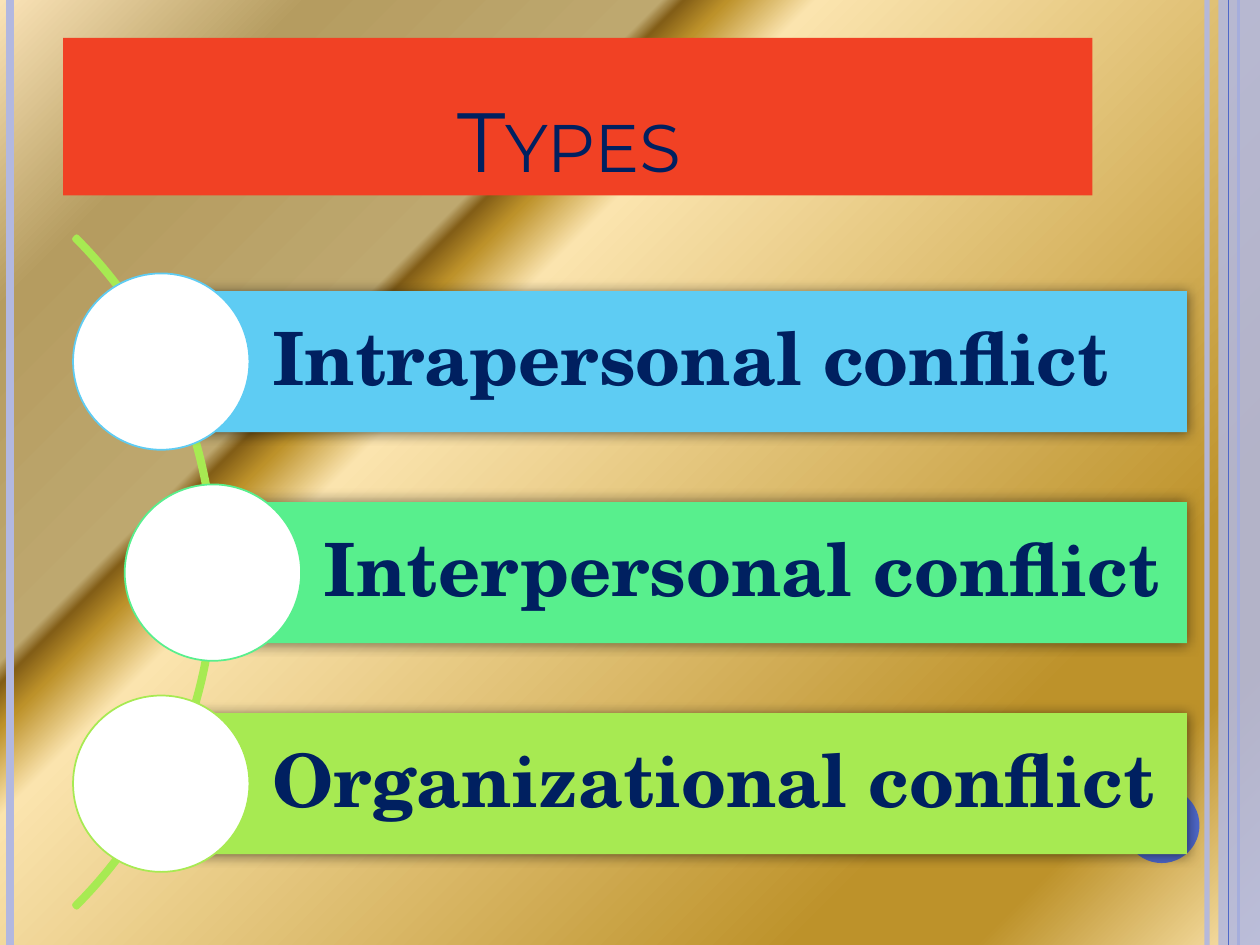
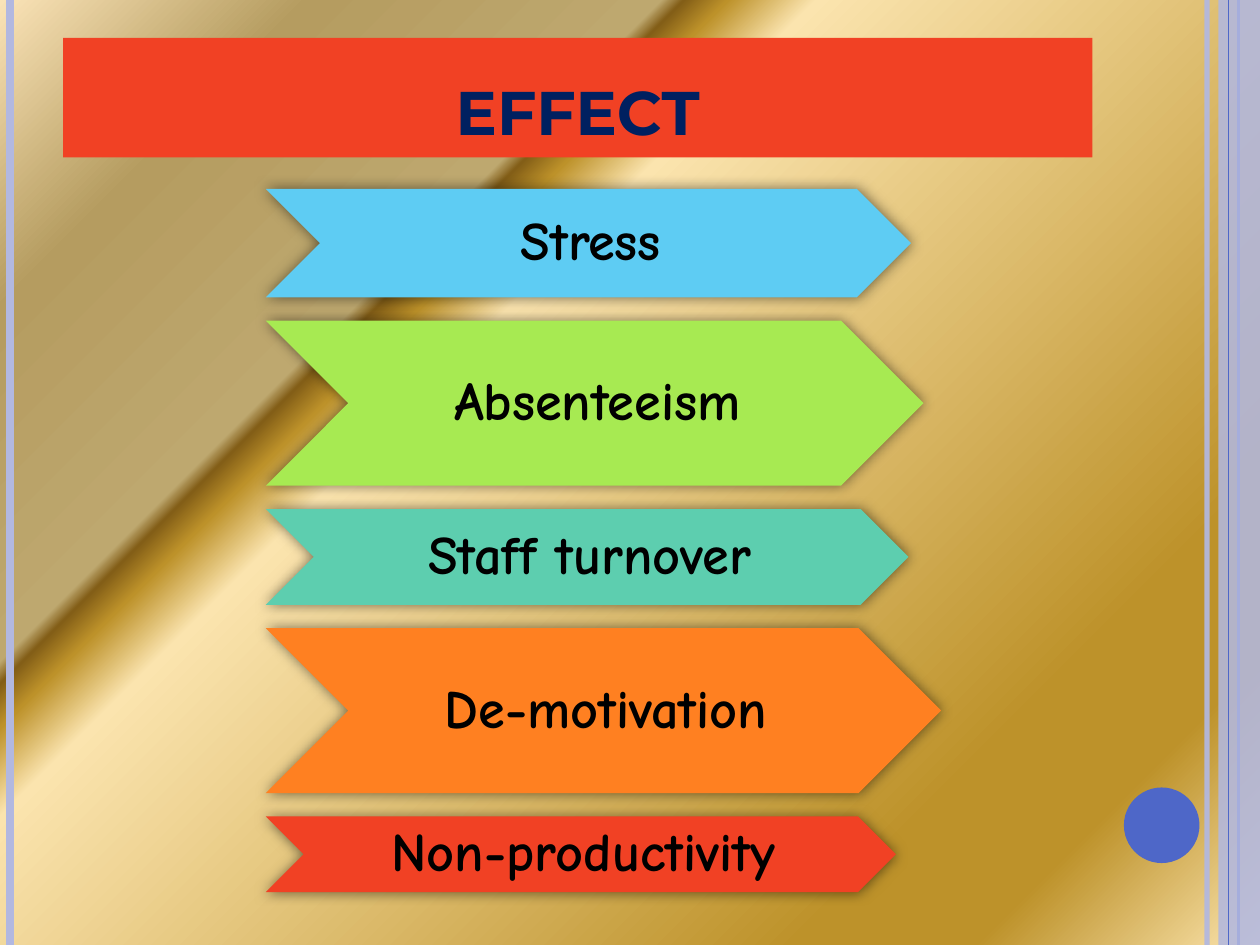
from lxml.etree import SubElement
from pptx import Presentation
from pptx.dml.color import RGBColor
from pptx.enum.shapes import MSO_CONNECTOR, MSO_SHAPE
from pptx.enum.text import MSO_ANCHOR, MSO_AUTO_SIZE, PP_ALIGN
from pptx.oxml.ns import qn
from pptx.util import Inches, Pt

SLIDE_WIDTH, SLIDE_HEIGHT = 10, 7.5

NAVY = RGBColor(0x00, 0x20, 0x60)
BLACK = RGBColor(0x00, 0x00, 0x00)
WHITE = RGBColor(0xFF, 0xFF, 0xFF)
RED = RGBColor(0xF1, 0x41, 0x24)
SKY = RGBColor(0x5E, 0xCC, 0xF3)
MINT = RGBColor(0x58, 0xEF, 0x8D)
LIME = RGBColor(0xA7, 0xEA, 0x52)
TEAL = RGBColor(0x5D, 0xCE, 0xAF)
ORANGE = RGBColor(0xFF, 0x80, 0x21)
INDIGO = RGBColor(0x4E, 0x67, 0xC8)
LAVENDER = RGBColor(0xB2, 0xB8, 0xE0)
CREAM = RGBColor(0xFB, 0xE4, 0xAE)
GOLD = RGBColor(0xBD, 0x92, 0x2A)
BRONZE = RGBColor(0x83, 0x5E, 0x17)
SAND = RGBColor(0xBE, 0xA8, 0x6F)
KHAKI = RGBColor(0xB5, 0x9C, 0x60)
PALE = RGBColor(0xFA, 0xE3, 0xB7)

# Gold sheen, running from the bottom right to the top left corner
SHEEN = [(0, CREAM), (13, GOLD), (21, GOLD), (63, CREAM), (67, GOLD),
         (69, BRONZE), (70, SAND), (86, KHAKI), (100, PALE)]

TITLE_FONT, TYPE_FONT, EFFECT_FONT = "Montserrat", "TeX Gyre Schola", "Comic Neue"
TITLE_LEFT, TITLE_TOP, TITLE_WIDTH = 0.5, 0.3, 8.17

# Conflict types: name, left edge of the bar, colour
TYPES = [("Intrapersonal conflict", 1.27, SKY),
         ("Interpersonal conflict", 1.68, MINT),
         ("Organizational conflict", 1.27, LIME)]
BAR_TOP, LAST_BAR_TOP, BAR_HEIGHT, BAR_RIGHT = 2.31, 5.66, 1.12, 9.42
DISC_SIZE = BAR_HEIGHT * 1.25

# Effects: name, chevron width, chevron height, colour
EFFECTS = [("Stress", 5.12, 0.86, SKY),
           ("Absenteeism", 5.22, 1.31, LIME),
           ("Staff turnover", 5.1, 0.76, TEAL),
           ("De-motivation", 5.36, 1.31, ORANGE),
           ("Non-productivity", 5, 0.6, RED)]
EFFECTS_LEFT, EFFECTS_TOP, EFFECTS_BOTTOM = 2.11, 1.5, 7.08


def set_opacity(container, percent):
    """Make the colour inside a shape's fill or line partly transparent."""
    colour = container.find(".//" + qn("a:srgbClr"))
    SubElement(colour, qn("a:alpha"), val=str(percent * 1000))


def add_figure(slide, preset, box, fill=None, line=None, line_width=1):
    figure = slide.shapes.add_shape(preset, *(Inches(length) for length in box))
    figure.shadow.inherit = False
    if fill is None:
        figure.fill.background()
    else:
        figure.fill.solid()
        figure.fill.fore_color.rgb = fill
    if line is None:
        figure.line.fill.background()
    else:
        figure.line.color.rgb = line
        figure.line.width = Pt(line_width)
    return figure


def add_glow(figure):
    """Give a figure a soft dark rim on all sides."""
    effects = figure.element.spPr.find(qn("a:effectLst"))
    rim = SubElement(effects, qn("a:outerShdw"), blurRad=str(Pt(7.5)),
                     dist="0", dir="0", rotWithShape="0")
    colour = SubElement(rim, qn("a:srgbClr"), val=str(BLACK))
    SubElement(colour, qn("a:alpha"), val="50000")


def add_rule(slide, x, colour, width):
    """Draw a vertical line over the full height of the slide."""
    rule = slide.shapes.add_connector(MSO_CONNECTOR.STRAIGHT, Inches(x), 0,
                                      Inches(x), Inches(SLIDE_HEIGHT))
    rule.line.color.rgb = colour
    rule.line.width = Pt(width)
    SubElement(rule.element.spPr, qn("a:effectLst"))
    return rule


def add_run(paragraph, text, font, size, colour, bold=False):
    run = paragraph.add_run()
    run.text = text
    run.font.name = font
    run.font.size = Pt(size)
    run.font.color.rgb = colour
    run.font.bold = bold
    return run


def write_label(figure, text, font, size, colour, align, insets):
    frame = figure.text_frame
    frame.word_wrap = True
    frame.vertical_anchor = MSO_ANCHOR.MIDDLE
    (frame.margin_left, frame.margin_top,
     frame.margin_right, frame.margin_bottom) = (Inches(inset) for inset in insets)
    paragraph = frame.paragraphs[0]
    paragraph.alignment = align
    paragraph.line_spacing = 0.9
    add_run(paragraph, text, font, size, colour, bold=True)


def paint_sheen(master):
    fill = master.background.fill
    fill.gradient()
    fill.gradient_angle = 135
    stops = master.element.find(".//" + qn("a:gsLst"))
    for stop in list(stops):
        stops.remove(stop)
    for percent, colour in SHEEN:
        stop = SubElement(stops, qn("a:gs"), pos=str(percent * 1000))
        SubElement(stop, qn("a:srgbClr"), val=str(colour))


def decorate_master(master, slide):
    """Draw the side bands on a slide, then move them to the master."""
    edge_rule = add_rule(slide, 9.58, LAVENDER, 3)
    set_opacity(edge_rule.element.spPr, 93)
    left_rule = add_rule(slide, 0.08, LAVENDER, 4.5)
    dark_rule = add_rule(slide, 9.83, INDIGO, 1.5)
    band = add_figure(slide, MSO_SHAPE.RECTANGLE,
                      (9.67, 0, SLIDE_WIDTH - 9.67, SLIDE_HEIGHT), LAVENDER)
    set_opacity(band.element.spPr, 87)
    thin_rule = add_rule(slide, 9.75, INDIGO, 0.75)
    dot = add_figure(slide, MSO_SHAPE.OVAL, (8.92, 6.25, 0.6, 0.6), INDIGO)

    tree = master.element.find(".//" + qn("p:spTree"))
    first_id = 1 + max(shape.shape_id for shape in master.shapes)
    parts = (edge_rule, left_rule, dark_rule, band, thin_rule, dot)
    for number, part in enumerate(parts, first_id):
        part.element.find(".//" + qn("p:cNvPr")).set("id", str(number))
        tree.append(part.element)


def set_title(slide, text, height, size, bold=False):
    title = slide.shapes.title
    title.left, title.top = Inches(TITLE_LEFT), Inches(TITLE_TOP)
    title.width, title.height = Inches(TITLE_WIDTH), Inches(height)
    title.fill.solid()
    title.fill.fore_color.rgb = RED
    frame = title.text_frame
    frame.auto_size = MSO_AUTO_SIZE.NONE
    frame.vertical_anchor = MSO_ANCHOR.BOTTOM
    paragraph = frame.paragraphs[0]
    paragraph.alignment = PP_ALIGN.CENTER
    run = add_run(paragraph, text, TITLE_FONT, size, NAVY, bold)
    run.font._element.set("cap", "small")


def add_type(slide, name, left, top, colour):
    """Add a labelled bar with a disc centred on its left edge."""
    bar = add_figure(slide, MSO_SHAPE.RECTANGLE,
                     (left, top, BAR_RIGHT - left, BAR_HEIGHT), colour)
    add_glow(bar)
    write_label(bar, name, TYPE_FONT, 42, NAVY, PP_ALIGN.LEFT,
                (0.89, 0.12, 0.12, 0.12))
    disc_top = top - (DISC_SIZE - BAR_HEIGHT) / 2
    add_figure(slide, MSO_SHAPE.OVAL,
               (left + 0.01 - DISC_SIZE / 2, disc_top, DISC_SIZE, DISC_SIZE),
               WHITE, colour)


def add_types(slide):
    arc = add_figure(slide, MSO_SHAPE.BLOCK_ARC, (-5.81, 0.78, 7.52, 7.52),
                     line=LIME, line_width=3)
    # Start angle, end angle (315 and 45 degrees) and thickness
    for index, value in enumerate((189, 27, 0.003)):
        arc.adjustments[index] = value
    pitch = (LAST_BAR_TOP - BAR_TOP) / (len(TYPES) - 1)
    for row, (name, left, colour) in enumerate(TYPES):
        add_type(slide, name, left, BAR_TOP + row * pitch, colour)


def add_effects(slide):
    heights = sum(height for _, _, height, _ in EFFECTS)
    gap = (EFFECTS_BOTTOM - EFFECTS_TOP - heights) / (len(EFFECTS) - 1)
    top = EFFECTS_TOP
    for name, width, height, colour in EFFECTS:
        chevron = add_figure(slide, MSO_SHAPE.CHEVRON,
                             (EFFECTS_LEFT, top, width, height), colour)
        add_glow(chevron)
        write_label(chevron, name, EFFECT_FONT, 31, BLACK, PP_ALIGN.CENTER,
                    (0.04, 0.02, 0, 0.02))
        top += height + gap


def main():
    deck = Presentation()
    deck.slide_width, deck.slide_height = Inches(SLIDE_WIDTH), Inches(SLIDE_HEIGHT)
    title_only = deck.slide_layouts.get_by_name("Title Only")
    types_slide = deck.slides.add_slide(title_only)
    effects_slide = deck.slides.add_slide(title_only)

    paint_sheen(deck.slide_master)
    decorate_master(deck.slide_master, types_slide)

    set_title(types_slide, "Types ", 1.25, 48)
    add_types(types_slide)
    set_title(effects_slide, "effect", 0.95, 44, bold=True)
    add_effects(effects_slide)
    deck.save("out.pptx")


if __name__ == "__main__":
    main()
